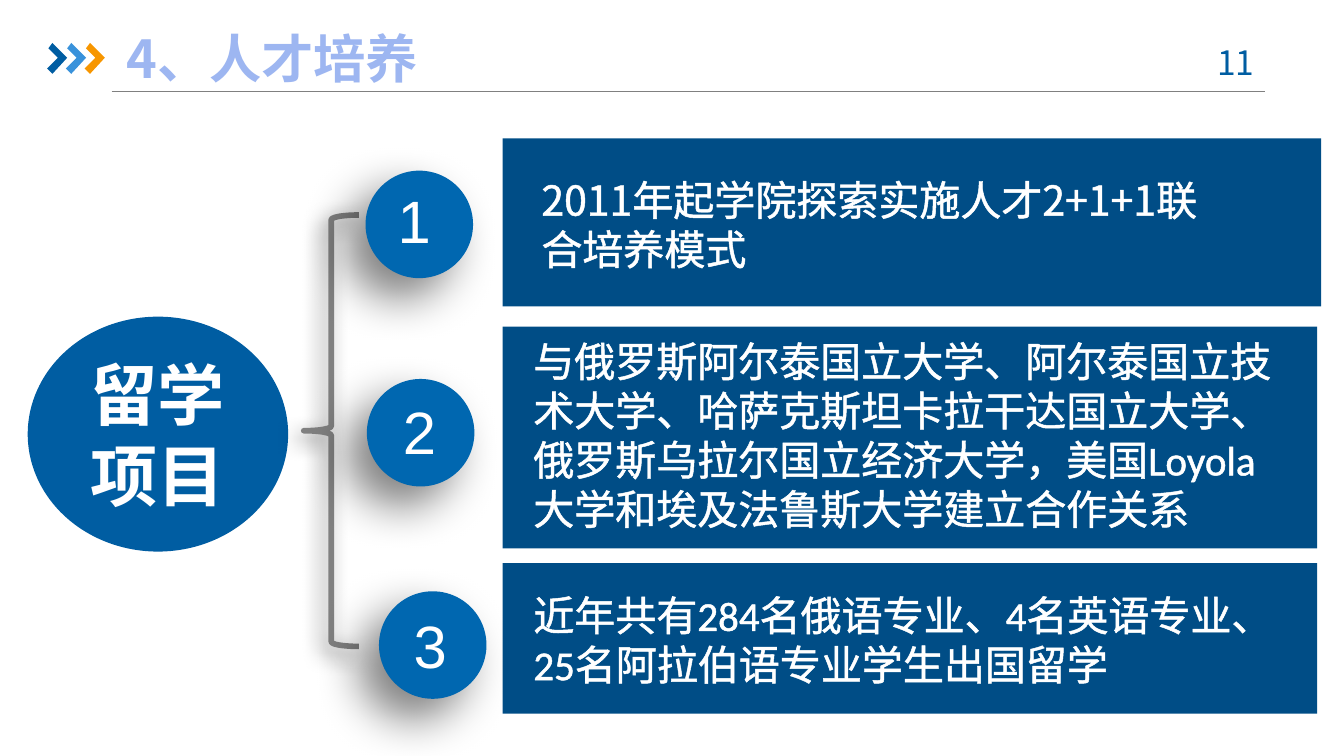
from lxml import etree
from pptx import Presentation
from pptx.dml.color import RGBColor
from pptx.enum.shapes import MSO_CONNECTOR, MSO_SHAPE
from pptx.enum.text import MSO_ANCHOR, PP_ALIGN
from pptx.oxml import parse_xml
from pptx.oxml.ns import nsdecls, qn
from pptx.util import Inches, Pt

COLORS = {
    "navy": "004D86", "blue": "005DA2", "badge": "0067B0", "sky": "3992DB",
    "orange": "F79600", "gray": "808080", "title": "9DB6F1", "white": "FFFFFF",
}
CJK_FONT = "Noto Sans CJK SC"

# panel box, text box, font, text
PANELS = [
    ((3.74, 1.03, 6.09, 1.25), (3.93, 1.25, 5.08, 0.84), CJK_FONT,
     "2011年起学院探索实施人才2+1+1联合培养模式"),
    ((3.74, 2.43, 6.06, 1.65), (3.87, 2.45, 5.83, 1.57), "Calibri",
     "与俄罗斯阿尔泰国立大学、阿尔泰国立技术大学、哈萨克斯坦卡拉干达国立大学、"
     "俄罗斯乌拉尔国立经济大学，美国Loyola大学和埃及法鲁斯大学建立合作关系"),
    ((3.74, 4.19, 6.06, 1.12), (3.87, 4.34, 5.85, 0.84), "Calibri",
     "近年共有284名俄语专业、4名英语专业、25名阿拉伯语专业学生出国留学"),
]
# circle box, number box
BADGES = [
    ((2.72, 1.27, 0.8, 0.8), (2.86, 1.32, 0.67, 0.63)),
    ((2.73, 2.82, 0.8, 0.8), (2.9, 2.89, 0.59, 0.63)),
    ((2.82, 4.4, 0.8, 0.8), (2.98, 4.48, 0.44, 0.63)),
]


def color(name):
    return RGBColor.from_string(COLORS[name])


def lengths(box):
    return [Inches(value) for value in box]


def add_run(paragraph, text, size, font_name, color_name, bold=False):
    run = paragraph.add_run()
    run.text = text
    font = run.font
    font.size, font.name, font.bold = Pt(size), font_name, bold
    font.color.rgb = color(color_name)
    east_asian = etree.SubElement(run._r.get_or_add_rPr(), qn("a:ea"))
    east_asian.set("typeface", CJK_FONT)
    return run


def add_outline(run, color_name, width):
    run._r.get_or_add_rPr().insert(0, parse_xml(
        f'<a:ln {nsdecls("a")} w="{Pt(width)}"><a:solidFill>'
        f'<a:srgbClr val="{COLORS[color_name]}"/></a:solidFill></a:ln>'))


def add_text_box(slide, box):
    frame = slide.shapes.add_textbox(*lengths(box)).text_frame
    frame.word_wrap = True
    return frame


def add_filled_shape(slide, kind, box, fill):
    shape = slide.shapes.add_shape(kind, *lengths(box))
    shape.shadow.inherit = False
    shape.fill.solid()
    shape.fill.fore_color.rgb = color(fill)
    shape.line.fill.background()
    return shape


def add_shadow(shape, blur, distance):
    """Cast a half-transparent black shadow to the lower left."""
    shape.shadow.inherit = False
    effects = shape._element.spPr.find(qn("a:effectLst"))
    effects.append(parse_xml(
        f'<a:outerShdw {nsdecls("a")} blurRad="{Pt(blur)}" dist="{Pt(distance)}" '
        'dir="8100000" algn="tr" rotWithShape="0"><a:srgbClr val="000000">'
        '<a:alpha val="50000"/></a:srgbClr></a:outerShdw>'))


def add_chevron(slide, left, top, fill):
    points = [(0.01, 0.04), (0.04, 0), (0.15, 0.11), (0.04, 0.23), (0, 0.19), (0.08, 0.11)]
    corners = [(Inches(left + x), Inches(top + y)) for x, y in points]
    builder = slide.shapes.build_freeform(*corners[0], scale=1.0)
    builder.add_line_segments(corners[1:], close=True)
    chevron = builder.convert_to_shape()
    chevron.shadow.inherit = False
    chevron.fill.solid()
    chevron.fill.fore_color.rgb = color(fill)
    chevron.line.fill.background()


def add_header(slide, left, top):
    rule = slide.shapes.add_connector(
        MSO_CONNECTOR.STRAIGHT, *lengths((left + 0.48, top + 0.36, left + 9.06, top + 0.36)))
    rule.line.color.rgb = color("gray")
    rule.line.width = Pt(0.75)
    etree.SubElement(rule._element.spPr, qn("a:effectLst"))

    for index, fill in enumerate(("blue", "sky", "orange")):
        add_chevron(slide, left + 0.14 * index, top, fill)

    number = add_text_box(slide, (left + 8.51, top - 0.06, 0.73, 0.4)).paragraphs[0]
    number.alignment = PP_ALIGN.CENTER
    add_run(number, "11 ", 18, CJK_FONT, "blue")

    title = add_text_box(slide, (left + 0.59, top - 0.1, 7.54, 0.41))
    title.margin_left = title.margin_right = 0
    title.vertical_anchor = MSO_ANCHOR.MIDDLE
    add_run(title.paragraphs[0], "4、", 28, CJK_FONT, "title", bold=True)
    add_run(title.paragraphs[0], "人才培养", 28, "Arial", "title", bold=True)


def add_topic(slide, box):
    topic = add_filled_shape(slide, MSO_SHAPE.OVAL, box, "blue")
    topic.line.color.rgb = color("blue")
    topic.line.width = Pt(2)
    frame = topic.text_frame
    frame.vertical_anchor = MSO_ANCHOR.MIDDLE
    for index, text in enumerate(("留学", "项目")):
        paragraph = frame.add_paragraph() if index else frame.paragraphs[0]
        paragraph.alignment = PP_ALIGN.CENTER
        add_run(paragraph, text, 36, "Arial", "white", bold=True)


def add_brace(slide, box):
    brace = slide.shapes.add_shape(MSO_SHAPE.LEFT_BRACE, *lengths(box))
    brace.fill.background()
    brace.line.color.rgb = color("gray")
    brace.line.width = Pt(3)
    add_shadow(brace, 11, 5)


def add_badge(slide, circle_box, number_box, number):
    circle = add_filled_shape(slide, MSO_SHAPE.OVAL, circle_box, "badge")
    add_shadow(circle, 25, 15)
    paragraph = add_text_box(slide, number_box).paragraphs[0]
    add_run(paragraph, str(number), 32, "Arial", "white")


def add_panel(slide, panel_box, text_box, font_name, text):
    add_filled_shape(slide, MSO_SHAPE.RECTANGLE, panel_box, "navy")
    paragraph = add_text_box(slide, text_box).paragraphs[0]
    # Keep closing punctuation inside the text box
    paragraph._p.get_or_add_pPr().set("hangingPunct", "0")
    add_outline(add_run(paragraph, text, 22, font_name, "white"), "white", 1.45)


def main():
    presentation = Presentation()
    presentation.slide_width = Inches(10)
    presentation.slide_height = presentation.slide_width * 9 // 16
    slide = presentation.slides.add_slide(presentation.slide_layouts[6])
    add_header(slide, 0.35, 0.32)
    for panel in PANELS:
        add_panel(slide, *panel)
    add_topic(slide, (0.22, 2.37, 1.91, 1.72))
    add_brace(slide, (2.26, 1.6, 0.41, 3.21))
    for number, (circle_box, number_box) in enumerate(BADGES, start=1):
        add_badge(slide, circle_box, number_box, number)
    presentation.save("out.pptx")


if __name__ == "__main__":
    main()
